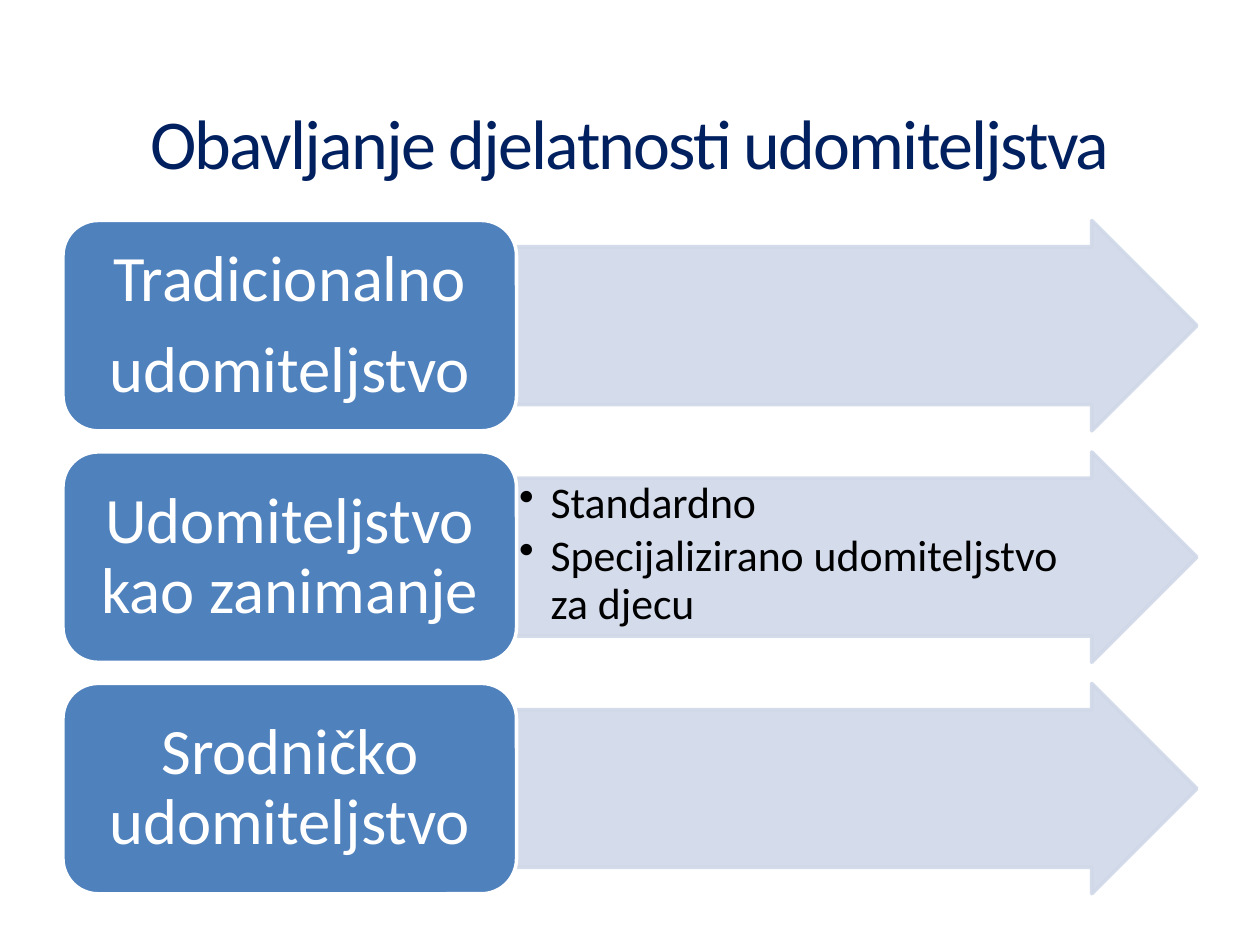
from dataclasses import dataclass

from lxml.etree import SubElement
from pptx import Presentation
from pptx.dml.color import RGBColor
from pptx.enum.shapes import MSO_SHAPE as Kind
from pptx.enum.text import MSO_ANCHOR as Anchor, PP_ALIGN as Align
from pptx.oxml.ns import qn
from pptx.util import Inches, Pt

WIDE, HIGH = 10, 7.5
LEFT, SPAN = 0.05 * WIDE, 0.9 * WIDE
TOP, TALL = 1.75, 1.67
STEP = 1.1 * TALL
LABEL = 0.4 * SPAN


@dataclass
class Row:
    label: list[str]
    points: list[str]


@dataclass
class Style:
    size: float
    color: str
    align: Align
    anchor: Anchor
    inset: tuple[float, float, float, float]
    after: float = 0
    lead: float = 1
    bullet: bool = False


ROWS = [
    Row(["Tradicionalno", "udomiteljstvo"], []),
    Row(["Udomiteljstvo kao zanimanje"],
        ["Standardno", "Specijalizirano udomiteljstvo za djecu"]),
    Row(["Srodničko udomiteljstvo"], []),
]
TITLE = Style(40, "002060", Align.CENTER, Anchor.MIDDLE, (0.1, 0.05, 0.1, 0.05))
NAME = Style(37, "FFFFFF", Align.CENTER, Anchor.MIDDLE,
             (0.15, 0.08, 0.15, 0.08), 12, 0.9)
POINT = Style(25, "000000", Align.LEFT, Anchor.TOP,
              (0.02, 0.02, 0.44, 0.02), 3.5, 0.9, True)


def paint(fmt, color: str, alpha: int = 100) -> None:
    fmt.solid()
    fmt.fore_color.rgb = RGBColor.from_string(color)
    if alpha < 100:
        tint = fmt._xPr.find(qn("a:solidFill"))[0]
        SubElement(tint, qn("a:alpha"), val=str(alpha * 1000))


def write(shape, lines: list[str], style: Style) -> None:
    frame = shape.text_frame
    frame.word_wrap = True
    frame.vertical_anchor = style.anchor
    (frame.margin_left, frame.margin_top,
     frame.margin_right, frame.margin_bottom) = map(Inches, style.inset)
    frame.text = "\n".join(lines)
    for para in frame.paragraphs:
        para.alignment = style.align
        para.line_spacing = style.lead
        para.space_after = Pt(style.after)
        if style.bullet:
            props = para._p.get_or_add_pPr()
            props.set("marL", str(Inches(0.25)))
            props.set("indent", str(Inches(-0.25)))
            SubElement(props, qn("a:buChar"), char="•")
        para.font.name = "Calibri"
        para.font.size = Pt(style.size)
        paint(para.font.fill, style.color)


def block(slide, kind: Kind, left: float, top: float, width: float,
          fill: str, edge: str, alpha: int = 100):
    shape = slide.shapes.add_shape(
        kind, *map(Inches, (left, top, width, TALL)))
    shape.shadow.inherit = False
    paint(shape.fill, fill, alpha)
    shape.line.width = Pt(2)
    paint(shape.line.fill, edge, alpha)
    return shape


def draw(slide, row: Row, top: float) -> None:
    arrow = block(slide, Kind.RIGHT_ARROW, LEFT + LABEL, top, SPAN - LABEL,
                  "D0D8E8", "D0D8E8", 90)
    arrow.adjustments[0] = 0.75
    arrow.adjustments[1] = 0.5
    if row.points:
        write(arrow, row.points, POINT)
    box = block(slide, Kind.ROUNDED_RECTANGLE, LEFT, top, LABEL,
                "4F81BD", "FFFFFF")
    write(box, row.label, NAME)


def main() -> None:
    deck = Presentation()
    deck.slide_width, deck.slide_height = Inches(WIDE), Inches(HIGH)
    slide = deck.slides.add_slide(deck.slide_layouts[6])
    title = slide.shapes.add_textbox(*map(Inches, (LEFT, 0.58, SPAN, 1.08)))
    write(title, ["Obavljanje djelatnosti udomiteljstva"], TITLE)
    run = title.text_frame.paragraphs[0].runs[0]
    run._r.get_or_add_rPr().set("spc", "-100")
    for index, row in enumerate(ROWS):
        draw(slide, row, TOP + index * STEP)
    deck.save("out.pptx")


if __name__ == "__main__":
    main()
